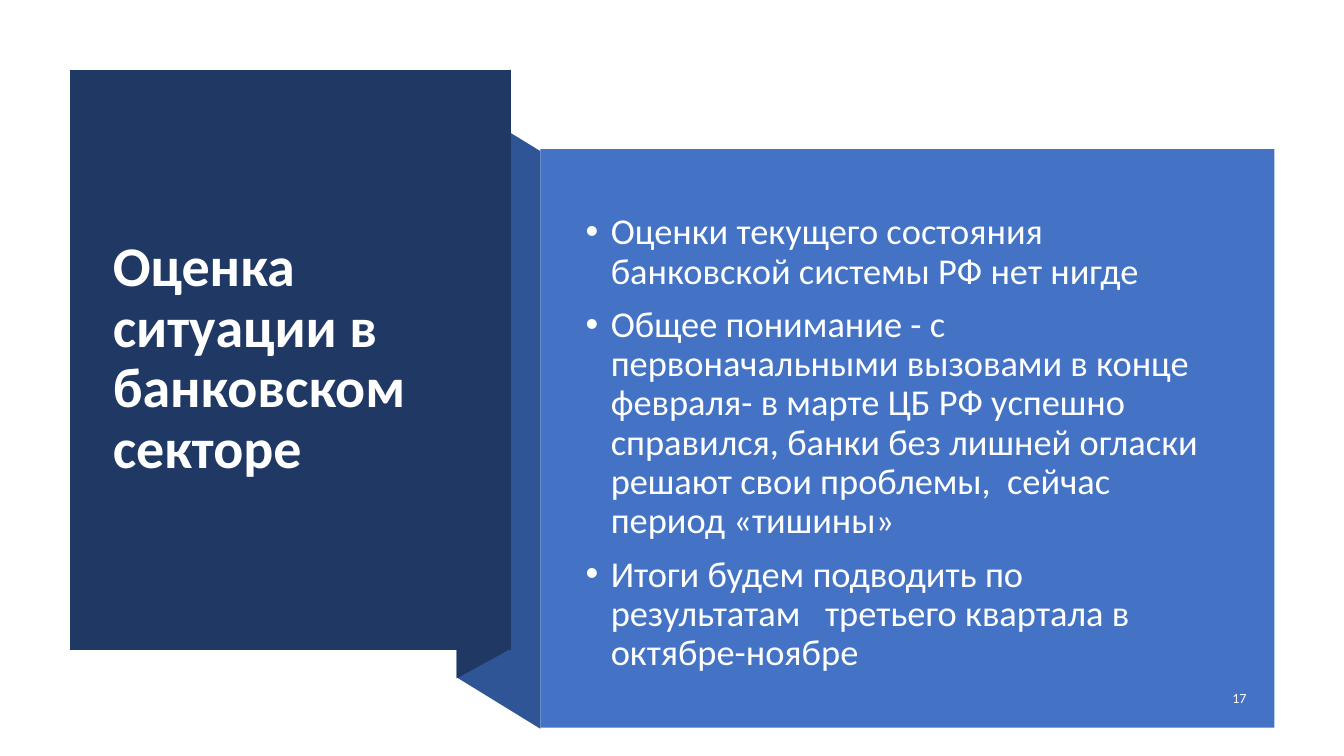
from dataclasses import dataclass

from lxml.etree import SubElement
from pptx import Presentation
from pptx.dml.color import RGBColor
from pptx.enum.shapes import MSO_SHAPE
from pptx.enum.text import MSO_ANCHOR, PP_ALIGN
from pptx.oxml.ns import qn
from pptx.util import Inches, Pt


@dataclass(frozen=True)
class Theme:
    font: str = "Calibri"
    navy: str = "203864"
    fold: str = "2F5597"
    blue: str = "4472C4"
    white: str = "FFFFFF"
    body_text: str = "FEFFFF"
    title_size: int = 40
    body_size: int = 26
    number_size: int = 10


@dataclass(frozen=True)
class Panel:
    points: tuple[tuple[float, float], ...]
    color: str


THEME = Theme()
NBSP = chr(160)  # no-break space, keeps neighbouring words on one line

# Ribbon pieces, from back to front
PANELS = (
    Panel(((5.36, 7.23), (4.53, 6.72), (4.53, 0.99), (5.36, 1.5)), THEME.fold),
    Panel(((5.06, 6.44), (4.53, 6.73), (4.53, 0.98), (5.06, 0.69)), THEME.navy),
    Panel(((0.69, 0.69), (5.07, 0.69), (5.07, 6.45), (0.69, 6.45)), THEME.navy),
)

TITLE = "Оценка ситуации в банковском секторе"
POINTS = (
    "Оценки текущего состояния банковской системы РФ нет нигде",
    f"Общее понимание -{NBSP}с первоначальными вызовами в конце февраля- в "
    f"марте{NBSP}ЦБ РФ успешно справился, банки без лишней огласки решают свои "
    f"проблемы, {NBSP}сейчас период «тишины»",
    f"Итоги будем подводить по результатам{NBSP * 3}третьего квартала "
    "в октябре-ноябре",
)


def paint(sp, color: str) -> None:
    sp.shadow.inherit = False
    sp.fill.solid()
    sp.fill.fore_color.rgb = RGBColor.from_string(color)
    sp.line.fill.background()


def add_panel(s, panel: Panel) -> None:
    points = [(Inches(x), Inches(y)) for x, y in panel.points]
    builder = s.shapes.build_freeform(*points[0])
    builder.add_line_segments(points[1:], close=True)
    paint(builder.convert_to_shape(), panel.color)


def add_bullet(p) -> None:
    pPr = p._p.get_or_add_pPr()
    pPr.set("marL", str(Inches(0.25)))
    pPr.set("indent", str(-Inches(0.25)))
    SubElement(pPr, qn("a:buFont"), typeface="Arial")
    SubElement(pPr, qn("a:buChar"), char="•")


def add_text(s, box: tuple[float, float, float, float], *texts: str, size: int,
             color: str = THEME.white, bold: bool = False, bullet: bool = False,
             align: PP_ALIGN = PP_ALIGN.LEFT, line: float = 1.0,
             before: int = 0, after: int = 0) -> None:
    tf = s.shapes.add_textbox(*map(Inches, box)).text_frame
    tf.word_wrap = True
    tf.vertical_anchor = MSO_ANCHOR.MIDDLE
    for i, text in enumerate(texts):
        p = tf.add_paragraph() if i else tf.paragraphs[0]
        p.alignment = align
        p.line_spacing = line
        p.space_before, p.space_after = Pt(before), Pt(after)
        if bullet:
            add_bullet(p)
        r = p.add_run()
        r.text = text
        r.font.name, r.font.size, r.font.bold = THEME.font, Pt(size), bold
        r.font.color.rgb = RGBColor.from_string(color)


def main() -> None:
    prs = Presentation()
    prs.slide_width, prs.slide_height = Inches(13.33), Inches(7.5)
    s = prs.slides.add_slide(prs.slide_layouts[6])

    # Folded ribbon and title
    for panel in PANELS:
        add_panel(s, panel)
    add_text(s, (1.02, 1.07, 3.71, 4.99), TITLE,
             size=THEME.title_size, bold=True, line=0.9)

    # Content panel
    content = s.shapes.add_shape(
        MSO_SHAPE.RECTANGLE, *map(Inches, (5.36, 1.48, 7.28, 5.74)))
    paint(content, THEME.blue)
    add_text(s, (5.71, 1.88, 6.6, 5.04), *POINTS, size=THEME.body_size,
             color=THEME.body_text, bullet=True, line=0.9, before=10)

    # Slide number
    add_text(s, (11.71, 6.75, 0.75, 0.35), "17", size=THEME.number_size,
             align=PP_ALIGN.RIGHT, after=6)

    prs.save("out.pptx")


if __name__ == "__main__":
    main()
